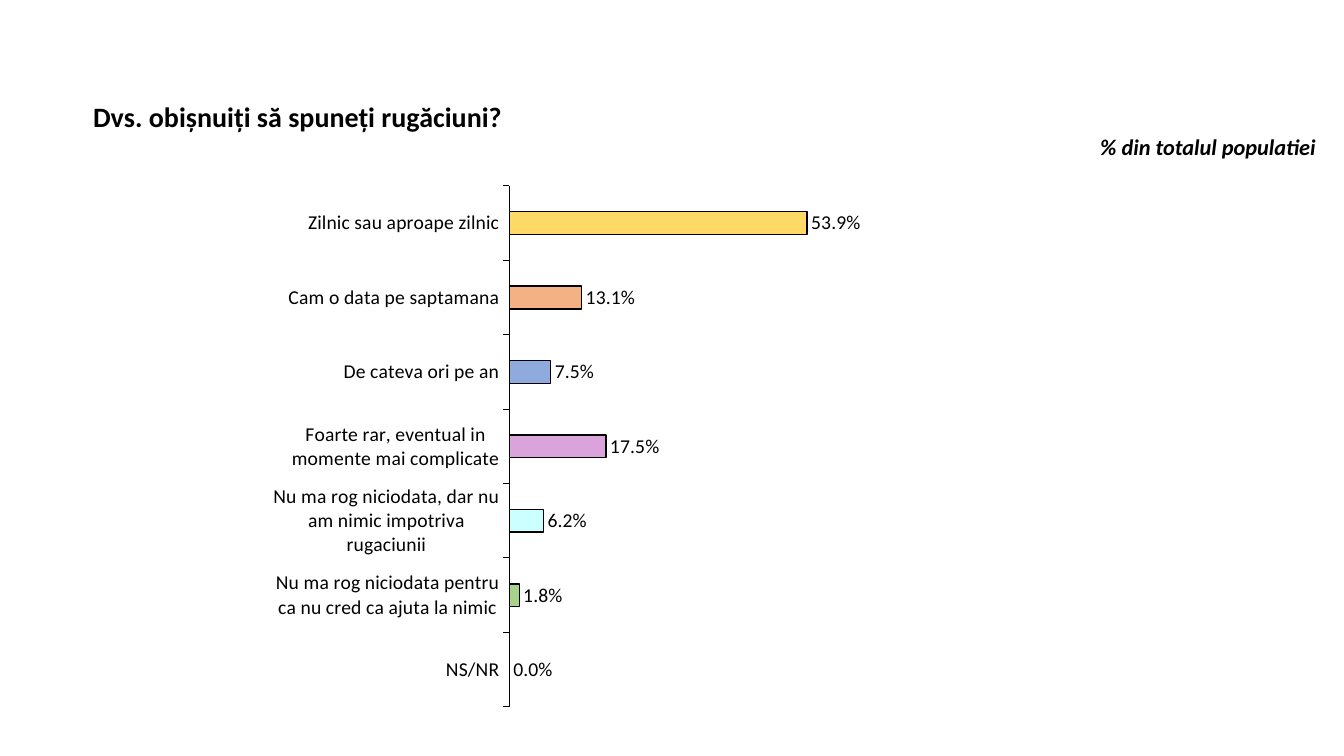
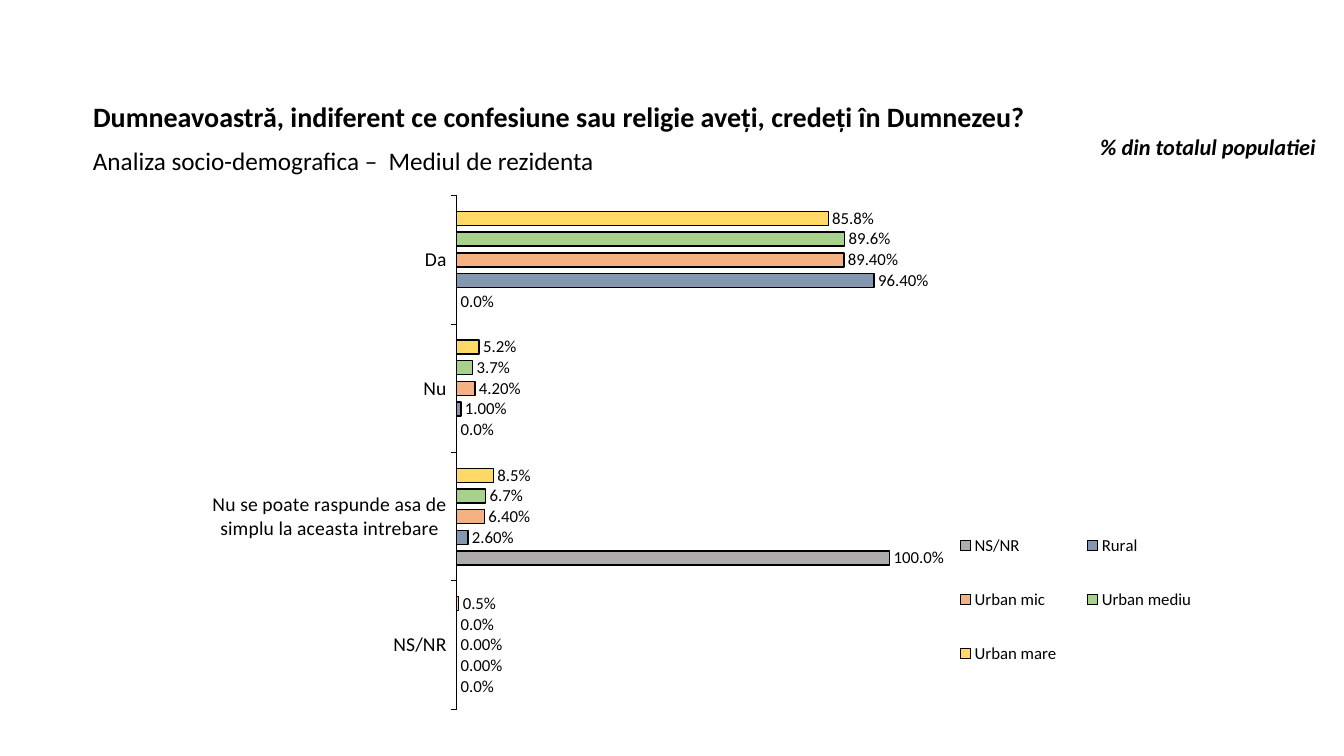
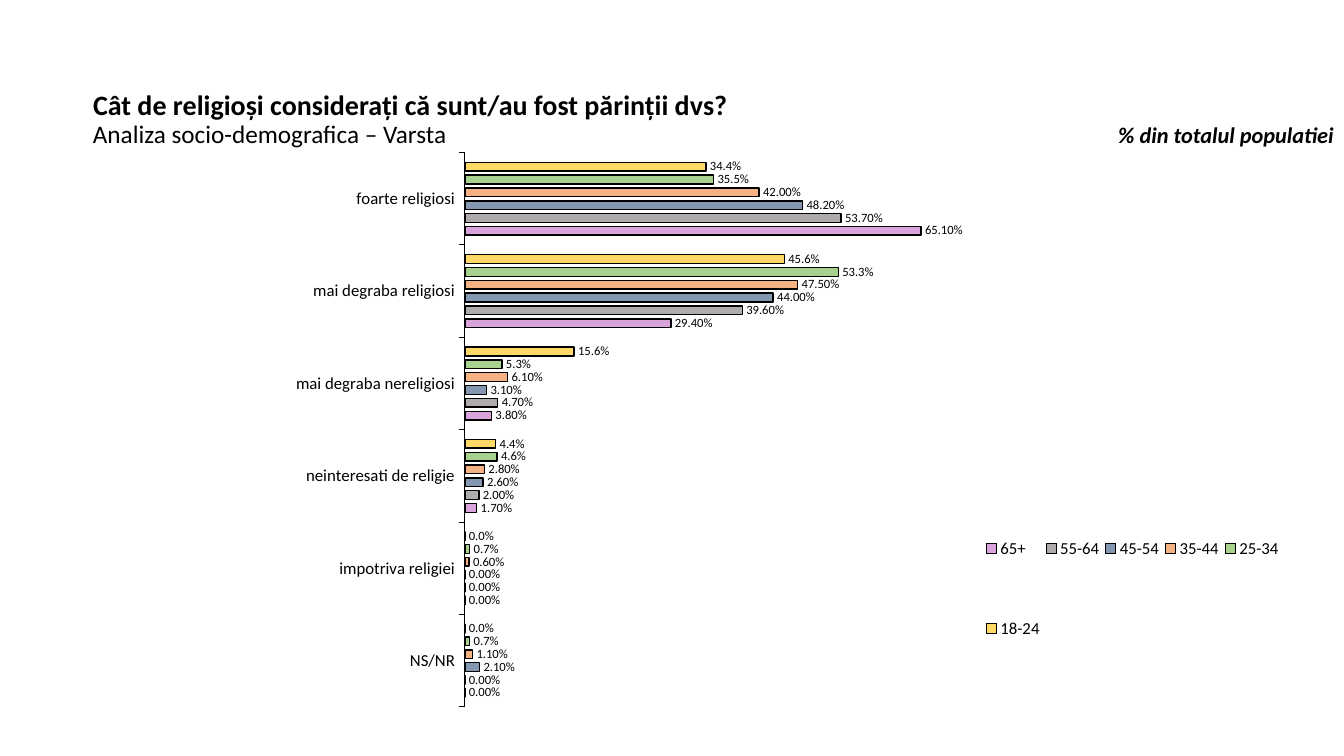
from collections import namedtuple
from dataclasses import dataclass

from lxml.etree import SubElement
from pptx import Presentation
from pptx.chart.data import CategoryChartData
from pptx.dml.color import RGBColor
from pptx.enum.chart import XL_CHART_TYPE, XL_LABEL_POSITION, XL_LEGEND_POSITION, XL_TICK_LABEL_POSITION, XL_TICK_MARK
from pptx.enum.text import MSO_ANCHOR, MSO_AUTO_SIZE, PP_ALIGN
from pptx.oxml.ns import qn
from pptx.util import Emu, Pt

PX = 914400 / 100.8
LEFT = 83
PLOT_PERMILLE = (271, 21, 623, 924)


@dataclass(frozen=True)
class Theme:
    font: str = "Calibri"
    black: str = "000000"
    yellow: str = "FFD966"
    green: str = "A9D18E"
    orange: str = "F4B183"
    slate: str = "8497B0"
    gray: str = "AFABAB"
    violet: str = "DBA3DB"
    blue: str = "8FAADC"
    cyan: str = "CCFFFF"
    silver: str = "BFBFBF"
    title: int = 20
    subtitle: int = 18
    note: int = 16
    legend: int = 12


T = Theme()
Series = namedtuple("Series", "name color label_format values")
Page = namedtuple(
    "Page", "question subtitle subtitle_top top right chart_box axis_max "
    "category_size label_size categories series legend_box")

# Survey results, boxes as left, top, width, height
pages = [
    Page("Dvs. obișnuiți să spuneți rugăciuni?", None, None, 94, 1326,
         (269, 174, 887, 564), 1, 14, 14,
         ["Zilnic sau aproape zilnic", "Cam o data pe saptamana", "De cateva ori pe an",
          "Foarte rar, eventual in momente mai complicate",
          "Nu ma rog niciodata, dar nu am nimic impotriva rugaciunii",
          "Nu ma rog niciodata pentru ca nu cred ca ajuta la nimic", "NS/NR"],
         [Series("Series 1", [T.yellow, T.orange, T.blue, T.violet, T.cyan, T.green, T.silver],
                 "0.0%", [0.539, 0.131, 0.075, 0.175, 0.062, 0.018, 0])],
         None),
    Page("Dumneavoastră, indiferent ce confesiune sau religie aveți, credeți în Dumnezeu?",
         "Analiza socio-demografica –  Mediul de rezidenta", 140, 94, 1326,
         (174, 184, 1043, 556), 1.5, 14, 12,
         ["Da", "Nu", "Nu se poate raspunde asa de simplu la aceasta intrebare", "NS/NR"],
         [Series("Urban mare", T.yellow, "0.0%", [0.858, 0.052, 0.085, 0.005]),
          Series("Urban mediu", T.green, "0.0%", [0.896, 0.037, 0.067, 0]),
          Series("Urban mic", T.orange, "0.00%", [0.894, 0.042, 0.064, 0]),
          Series("Rural", T.slate, "0.00%", [0.964, 0.01, 0.026, 0]),
          Series("NS/NR", T.gray, "0.0%", [0, 0, 1, 0]),
          Series("Column2", None, None, [])],
         (935, 502, 286, 196)),
    Page("Cât de religioși considerați că sunt/au fost părinții dvs?",
         "Analiza socio-demografica – Varsta", 113, 82, 1344,
         (160, 140, 1125, 600), 1, 12, 9,
         ["foarte religiosi", "mai degraba religiosi", "mai degraba nereligiosi",
          "neinteresati de religie", "impotriva religiei", "NS/NR"],
         [Series("18-24", T.yellow, "0.0%", [0.344, 0.456, 0.156, 0.044, 0, 0]),
          Series("25-34", T.green, "0.0%", [0.355, 0.533, 0.053, 0.046, 0.007, 0.007]),
          Series("35-44", T.orange, "0.00%", [0.42, 0.475, 0.061, 0.028, 0.006, 0.011]),
          Series("45-54", T.slate, "0.00%", [0.482, 0.44, 0.031, 0.026, 0, 0.021]),
          Series("55-64", T.gray, "0.00%", [0.537, 0.396, 0.047, 0.02, 0, 0]),
          Series("65+", None, None, []),
          Series("65+", T.violet, "0.00%", [0.651, 0.294, 0.038, 0.017, 0, 0])],
         (980, 478, 305, 221)),
]


def write_line(shape, box, text, size, align=PP_ALIGN.LEFT, bold=False, italic=False):
    shape.left, shape.top, shape.width, shape.height = [Emu(round(v * PX)) for v in box]
    frame = shape.text_frame
    frame.text = text
    frame.word_wrap = True
    frame.auto_size = MSO_AUTO_SIZE.NONE
    frame.vertical_anchor = MSO_ANCHOR.TOP
    frame.paragraphs[0].alignment = align
    font = frame.paragraphs[0].runs[0].font
    font.name, font.size, font.bold, font.italic = T.font, Pt(size), bold, italic
    font.color.rgb = RGBColor.from_string(T.black)


def place_in_chart(part, index, fractions, inner=False):
    for old in part.findall(qn("c:layout")):
        part.remove(old)
    layout = SubElement(part, qn("c:layout"))
    part.insert(index, layout)
    manual = SubElement(layout, qn("c:manualLayout"))
    settings = [("layoutTarget", "inner")] if inner else []
    settings += [("xMode", "edge"), ("yMode", "edge"), *zip("xywh", fractions)]
    for tag, value in settings:
        SubElement(manual, qn(f"c:{tag}")).set("val", str(value))


prs = Presentation()
prs.slide_width, prs.slide_height = Emu(round(1344 * PX)), Emu(round(756 * PX))
title_only = prs.slide_layouts[5]

for page in pages:
    slide = prs.slides.add_slide(title_only)

    # Question, note and subtitle
    width = page.right - LEFT
    write_line(slide.shapes.title, (LEFT, page.top, width, 44), page.question, T.title, bold=True)
    write_line(slide.shapes.add_textbox(0, 0, 0, 0), (LEFT, page.top + 34, width, 37),
               "% din totalul populatiei", T.note, PP_ALIGN.RIGHT, bold=True, italic=True)
    if page.subtitle:
        write_line(slide.shapes.add_textbox(0, 0, 0, 0), (LEFT, page.subtitle_top, 835, 40),
                   page.subtitle, T.subtitle)

    # Bar chart
    data = CategoryChartData(number_format="0.0%")
    data.categories = page.categories
    for answers in page.series:
        data.add_series(answers.name, answers.values)
    chart = slide.shapes.add_chart(XL_CHART_TYPE.BAR_CLUSTERED,
                                   *[Emu(round(v * PX)) for v in page.chart_box], data).chart
    chart.has_title = False
    chart.font.name, chart.font.size = T.font, Pt(page.label_size)
    chart.font.color.rgb = RGBColor.from_string(T.black)
    place_in_chart(chart._chartSpace.find(f".//{qn('c:plotArea')}"), 0,
                   [v / 1000 for v in PLOT_PERMILLE], inner=True)
    bars = chart.plots[0]
    bars.gap_width, bars.overlap, bars.vary_by_categories = 227, -48, False

    # Axes
    answer_axis, share_axis = chart.category_axis, chart.value_axis
    answer_axis.reverse_order = True
    answer_axis.has_major_gridlines = False
    answer_axis.major_tick_mark = XL_TICK_MARK.OUTSIDE
    answer_axis.tick_label_position = XL_TICK_LABEL_POSITION.LOW
    answer_axis.tick_labels.font.size = Pt(page.category_size)
    answer_axis.format.line.color.rgb = RGBColor.from_string(T.black)
    answer_axis.format.line.width = Pt(0.75)
    share_axis.visible = False
    share_axis.has_major_gridlines = False
    share_axis.minimum_scale, share_axis.maximum_scale, share_axis.major_unit = 0, page.axis_max, 0.5

    # Bar colours and value labels; a series without answers takes no room
    for bar_set, answers in zip(bars.series, page.series):
        if not answers.values:
            bar_set._element.remove(bar_set._element.find(qn("c:val")))
            continue
        if isinstance(answers.color, list):
            painted = [(bar_set.points[i], color) for i, color in enumerate(answers.color)]
        else:
            painted = [(bar_set, answers.color)]
        for bar, color in painted:
            bar.format.fill.solid()
            bar.format.fill.fore_color.rgb = RGBColor.from_string(color)
            bar.format.line.color.rgb = RGBColor.from_string(T.black)
            bar.format.line.width = Pt(1)
        bar_set.invert_if_negative = False
        labels = bar_set.data_labels
        labels.show_value = True
        labels.position = XL_LABEL_POSITION.OUTSIDE_END
        labels.number_format, labels.number_format_is_linked = answers.label_format, False
        labels.font.name, labels.font.size = T.font, Pt(page.label_size)
        labels.font.color.rgb = RGBColor.from_string(T.black)

    # Legend
    chart.has_legend = page.legend_box is not None
    if page.legend_box:
        legend = chart.legend
        legend.position = XL_LEGEND_POSITION.RIGHT
        legend.include_in_layout = False
        legend.font.name, legend.font.size = T.font, Pt(T.legend)
        left, top, chart_width, chart_height = page.chart_box
        x, y, w, h = page.legend_box
        place_in_chart(chart._chartSpace.find(f".//{qn('c:legend')}"), 1,
                       ((x - left) / chart_width, (y - top) / chart_height,
                        w / chart_width, h / chart_height))

prs.save("out.pptx")
